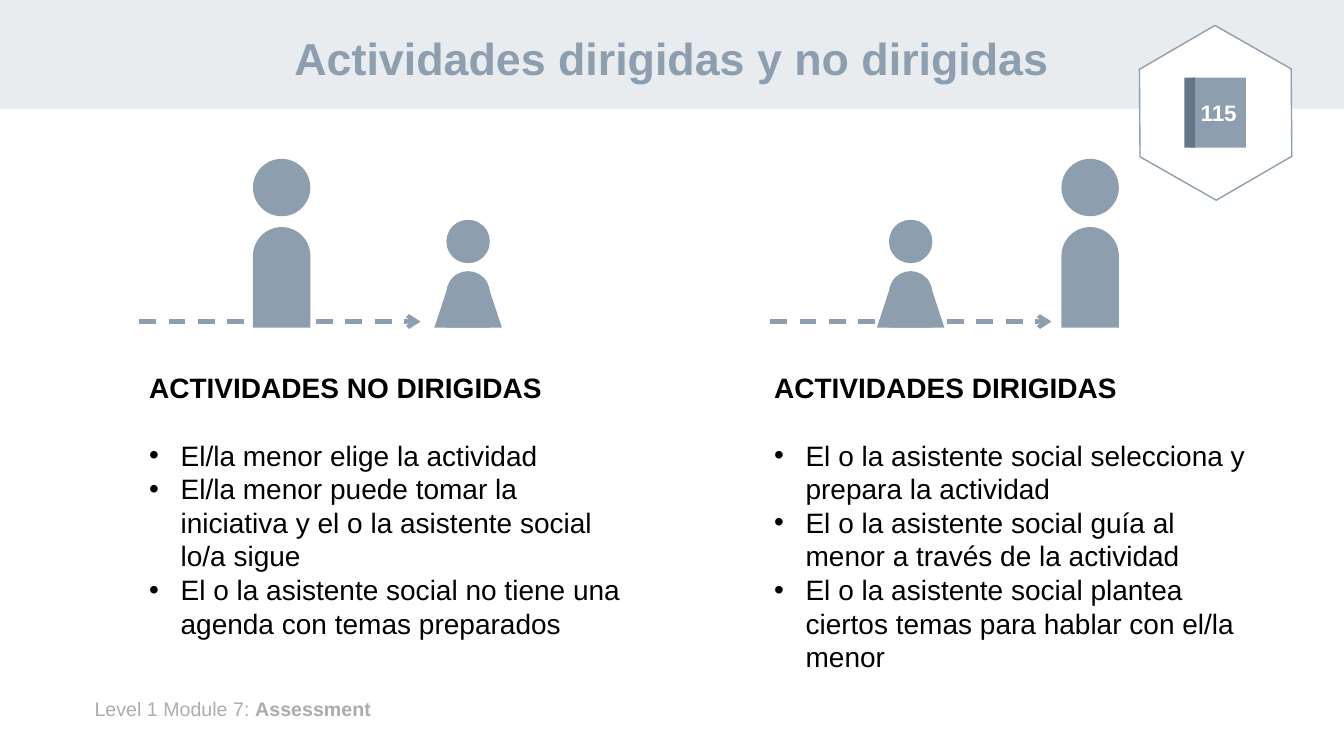
import pptx
import pptx.util
import pptx.dml.color
import pptx.enum.dml
import pptx.enum.shapes
import pptx.enum.text
import pptx.oxml.ns
import lxml.etree

Pt = pptx.util.Pt
RGB = pptx.dml.color.RGBColor.from_string
MSO = pptx.enum.shapes.MSO_SHAPE
ALIGN = pptx.enum.text.PP_ALIGN
ANCHOR = pptx.enum.text.MSO_ANCHOR
qn = pptx.oxml.ns.qn

TITLE = "Actividades dirigidas y no dirigidas"
FOOTER = [("Level 1 Module 7: ", False), ("Assessment", True)]
PAGE = "115"
COLUMNS = [
    {"heading": "ACTIVIDADES NO DIRIGIDAS",
     "bullets": ["El/la menor elige la actividad",
                 "El/la menor puede tomar la iniciativa y el o la asistente social lo/a sigue",
                 "El o la asistente social no tiene una agenda con temas preparados"],
     "left": 99.4, "height": 177, "arrow": 99.4, "adult": 180.7, "child": 310.3},
    {"heading": "ACTIVIDADES DIRIGIDAS",
     "bullets": ["El o la asistente social selecciona y prepara la actividad",
                 "El o la asistente social guía al menor a través de la actividad",
                 "El o la asistente social plantea ciertos temas para hablar con el/la menor"],
     "left": 545.8, "height": 225.4, "arrow": 550.1, "adult": 758.2, "child": 626.4},
]
THEME = {"font": "Arial", "band": "E8ECEF", "main": "8D9EAE", "spine": "62778A",
         "white": "FFFFFF", "text": "000000", "footer": "AFABAB",
         "title_size": 32, "body_size": 20, "page_size": 16, "footer_size": 14}
GROUND = 234
ARROW_Y, ARROW_LENGTH = 229.7, 201
INDENT = 22.5


def add_shape(parent, kind, box, fill, line=None, adj=()):
    sp = parent.add_shape(kind, *map(Pt, box))
    sp.shadow.inherit = False
    sp.fill.solid()
    sp.fill.fore_color.rgb = RGB(THEME[fill])
    if line:
        sp.line.color.rgb = RGB(THEME[line])
        sp.line.width = Pt(1)
    else:
        sp.line.fill.background()
    for i, value in enumerate(adj):
        sp.adjustments[i] = value
    return sp


def add_text_box(box):
    tf = slide.shapes.add_textbox(*map(Pt, box)).text_frame
    tf.word_wrap = True
    return tf


def add_run(p, text, size, color, bold=False):
    r = p.add_run()
    r.text = text
    r.font.color.rgb = RGB(THEME[color])
    for name, value in {"name": THEME["font"], "size": Pt(THEME[size]), "bold": bold}.items():
        setattr(r.font, name, value)


def add_bullet(p):
    pPr = p._p.get_or_add_pPr()
    for name, value in {"marL": INDENT, "indent": -INDENT}.items():
        pPr.set(name, str(int(Pt(value))))
    lxml.etree.SubElement(pPr, qn("a:buFont")).set("typeface", THEME["font"])
    lxml.etree.SubElement(pPr, qn("a:buChar")).set("char", "•")


def add_person(x, head, top, body_top):
    g = slide.shapes.add_group_shape().shapes
    add_shape(g, MSO.OVAL, (x, top, head, head), "main")
    add_shape(g, MSO.ROUND_2_SAME_RECTANGLE, (x, body_top, head, GROUND - body_top),
              "main", adj=(0.5, 0))
    return g


def add_child(x):
    g = add_person(x + 8.6, 31, 157, 193.7)
    add_shape(g, MSO.TRAPEZOID, (x, GROUND - 28, 48.2, 28), "main", adj=(0.33,))


def add_arrow(x):
    c = slide.shapes.add_connector(pptx.enum.shapes.MSO_CONNECTOR.STRAIGHT,
                                   Pt(x), Pt(ARROW_Y), Pt(x + ARROW_LENGTH), Pt(ARROW_Y))
    c.line.color.rgb = RGB(THEME["main"])
    c.line.width = Pt(3)
    c.line.dash_style = pptx.enum.dml.MSO_LINE.DASH
    lxml.etree.SubElement(c.line._get_or_add_ln(), qn("a:tailEnd")).set("type", "arrow")
    lxml.etree.SubElement(c._element.spPr, qn("a:effectLst"))


def add_column(column):
    tf = add_text_box((column["left"], 261.4, 359.3, column["height"]))
    p = tf.paragraphs[0]
    p.space_after = Pt(24)
    add_run(p, column["heading"], "body_size", "text", True)
    for bullet in column["bullets"]:
        p = tf.add_paragraph()
        add_bullet(p)
        add_run(p, bullet, "body_size", "text")


def add_badge():
    g = slide.shapes.add_group_shape().shapes
    hexagon = add_shape(g, MSO.HEXAGON, (805.7, 26.6, 125.3, 108), "white", "main", (0.29, 1.155))
    hexagon.rotation = 29.7
    book = add_shape(g, MSO.RECTANGLE, (851, 55.5, 39, 50), "main")
    tf = book.text_frame
    tf.word_wrap = False
    tf.vertical_anchor = ANCHOR.MIDDLE
    p = tf.paragraphs[0]
    p.alignment = ALIGN.CENTER
    add_run(p, PAGE, "page_size", "white", True)
    add_shape(g, MSO.RECTANGLE, (846, 55.5, 7.7, 50), "spine")


prs = pptx.Presentation()
prs.slide_width, prs.slide_height = Pt(960), Pt(540)
slide = prs.slides.add_slide(prs.slide_layouts[6])

add_shape(slide.shapes, MSO.RECTANGLE, (0, 0, 960, 77.6), "band")
p = add_text_box((60.5, 494.6, 817, 24.2)).paragraphs[0]
for text, bold in FOOTER:
    add_run(p, text, "footer_size", "footer", bold)

tf = add_text_box((66, 9.4, 828, 68.4))
tf.vertical_anchor = ANCHOR.MIDDLE
p = tf.paragraphs[0]
p.alignment = ALIGN.CENTER
p.line_spacing = 0.9
add_run(p, TITLE, "title_size", "main", True)

for column in COLUMNS:
    add_column(column)
    add_child(column["child"])
    add_person(column["adult"], 41, 113.5, 162.2)
    add_arrow(column["arrow"])
add_badge()

prs.save("out.pptx")
